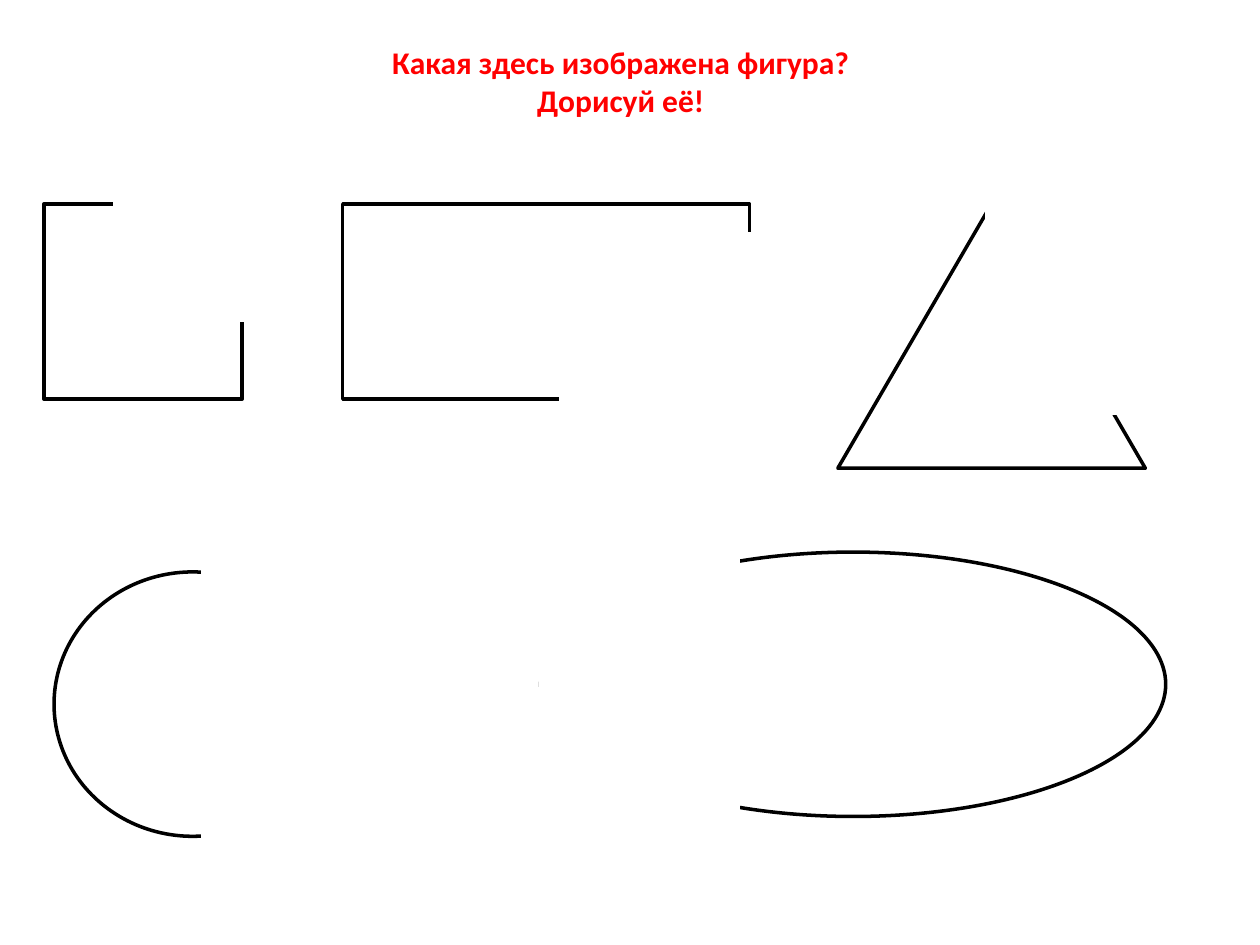
from dataclasses import dataclass

from pptx import Presentation
from pptx.dml.color import RGBColor
from pptx.enum import shapes, text
from pptx.util import Cm, Pt

COLORS = {"outline": "000000", "paper": "FFFFFF", "title": "FF0000"}
KIND = shapes.MSO_SHAPE
COVER_W = 3.99  # cm, shared by every cover


@dataclass
class Box:
    left: float
    top: float
    width: float
    height: float


@dataclass
class Puzzle:
    """A figure with a blank cover hiding part of its outline."""
    kind: shapes.MSO_SHAPE
    figure: Box
    cover: Box


PUZZLES = [
    Puzzle(KIND.RECTANGLE, Box(0.89, 4.11, 3.99, 3.94), Box(2.31, 2.51, COVER_W, 3.94)),
    Puzzle(KIND.RECTANGLE, Box(6.91, 4.11, 8.2, 3.94), Box(11.3, 4.72, COVER_W, 3.94)),
    Puzzle(KIND.ISOSCELES_TRIANGLE, Box(16.89, 4.11, 6.2, 5.33), Box(19.89, 3.73, COVER_W, 4.6)),
    Puzzle(KIND.OVAL, Box(1.09, 11.53, 5.59, 5.33), Box(4.09, 10.72, COVER_W, 7.01)),
    Puzzle(KIND.OVAL, Box(10.9, 11.13, 12.6, 5.33), Box(10.9, 10.31, COVER_W, 7.01)),
]


def rgb(name: str) -> RGBColor:
    return RGBColor.from_string(COLORS[name])


def add_shape(slide, kind: shapes.MSO_SHAPE, box: Box, line: str) -> None:
    sp = slide.shapes.add_shape(
        kind, Cm(box.left), Cm(box.top), Cm(box.width), Cm(box.height))
    sp.shadow.inherit = False
    sp.fill.solid()
    sp.fill.fore_color.rgb = rgb("paper")
    sp.line.color.rgb = rgb(line)
    sp.line.width = Pt(2)


def add_title(slide, wording: str) -> None:
    sp = slide.shapes.title
    sp.left, sp.top, sp.width, sp.height = Cm(5.11), Cm(0.74), Cm(14.81), Cm(2.39)
    tf = sp.text_frame
    tf.text = wording
    tf.auto_size = text.MSO_AUTO_SIZE.NONE
    tf.vertical_anchor = text.MSO_ANCHOR.TOP
    for p in tf.paragraphs:
        p.alignment = text.PP_ALIGN.CENTER
        for r in p.runs:
            r.font.name = "Calibri"
            r.font.size = Pt(18)
            r.font.bold = True
            r.font.color.rgb = rgb("title")


def main() -> None:
    prs = Presentation()
    prs.slide_width, prs.slide_height = Cm(25.4), Cm(19.05)
    slide = prs.slides.add_slide(prs.slide_layouts[5])  # title only

    # Heading
    add_title(slide, "Какая здесь изображена фигура?\nДорисуй её!")

    # Unfinished figures
    for puzzle in PUZZLES:
        add_shape(slide, puzzle.kind, puzzle.figure, "outline")
        add_shape(slide, KIND.RECTANGLE, puzzle.cover, "paper")

    prs.save("out.pptx")


if __name__ == "__main__":
    main()
